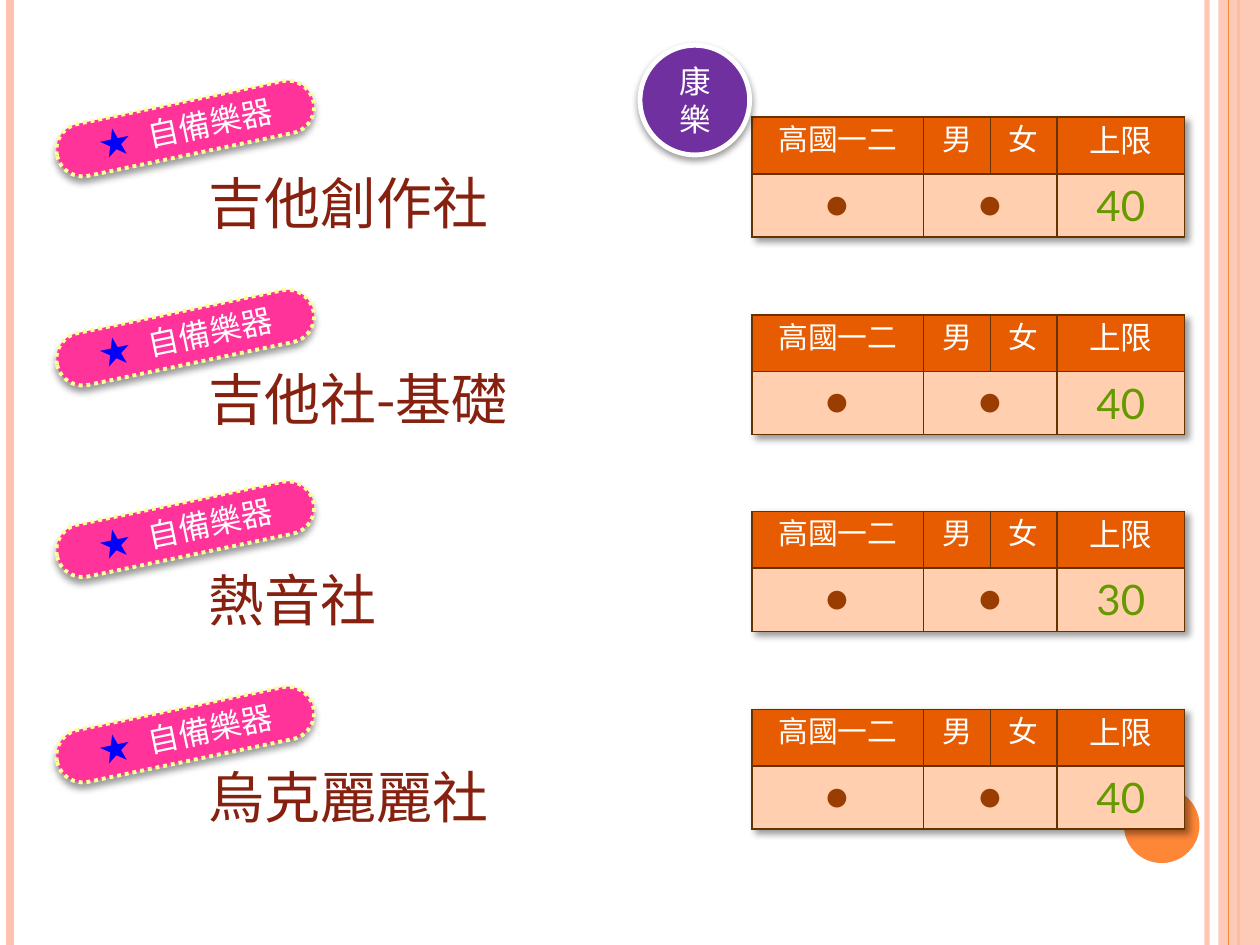
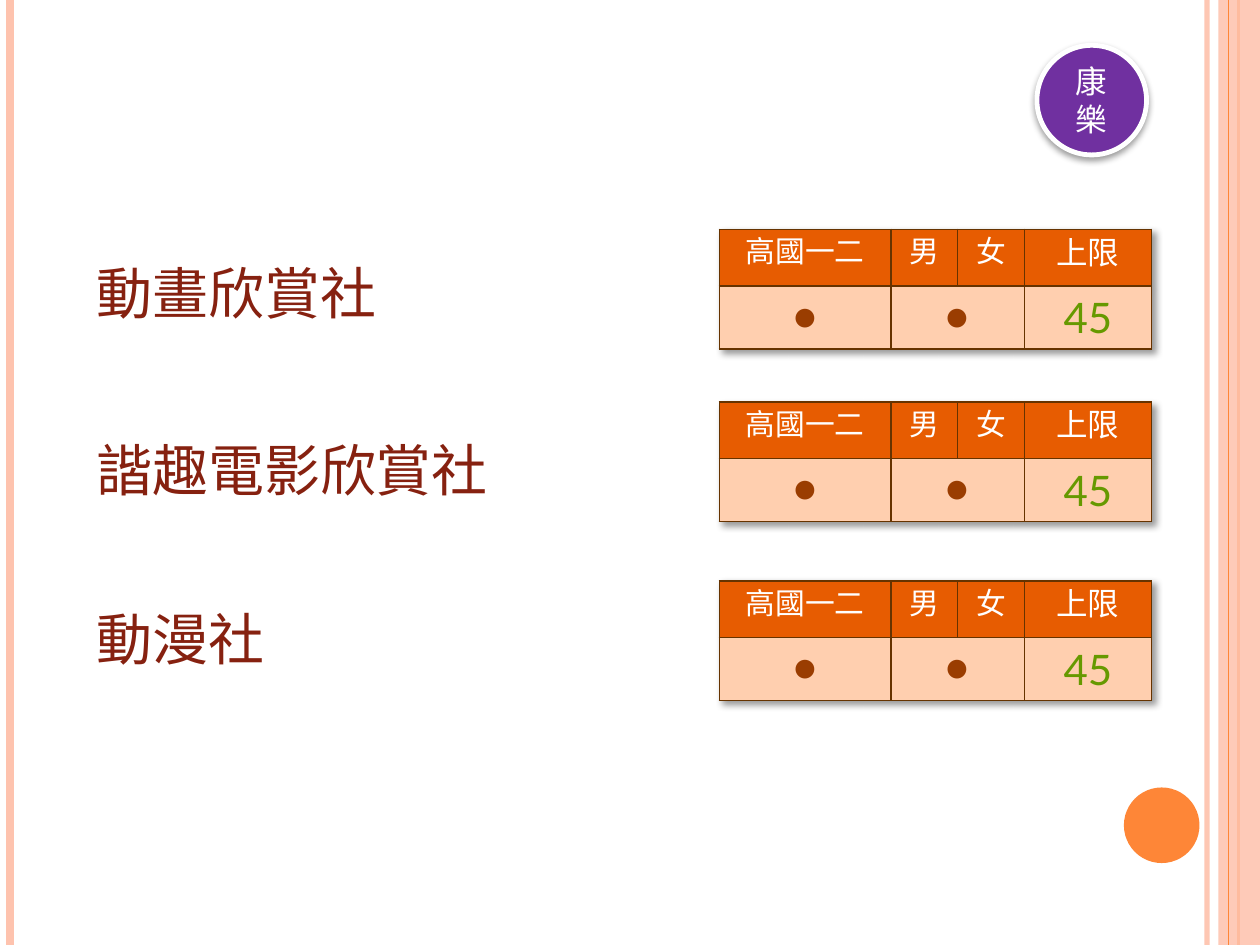
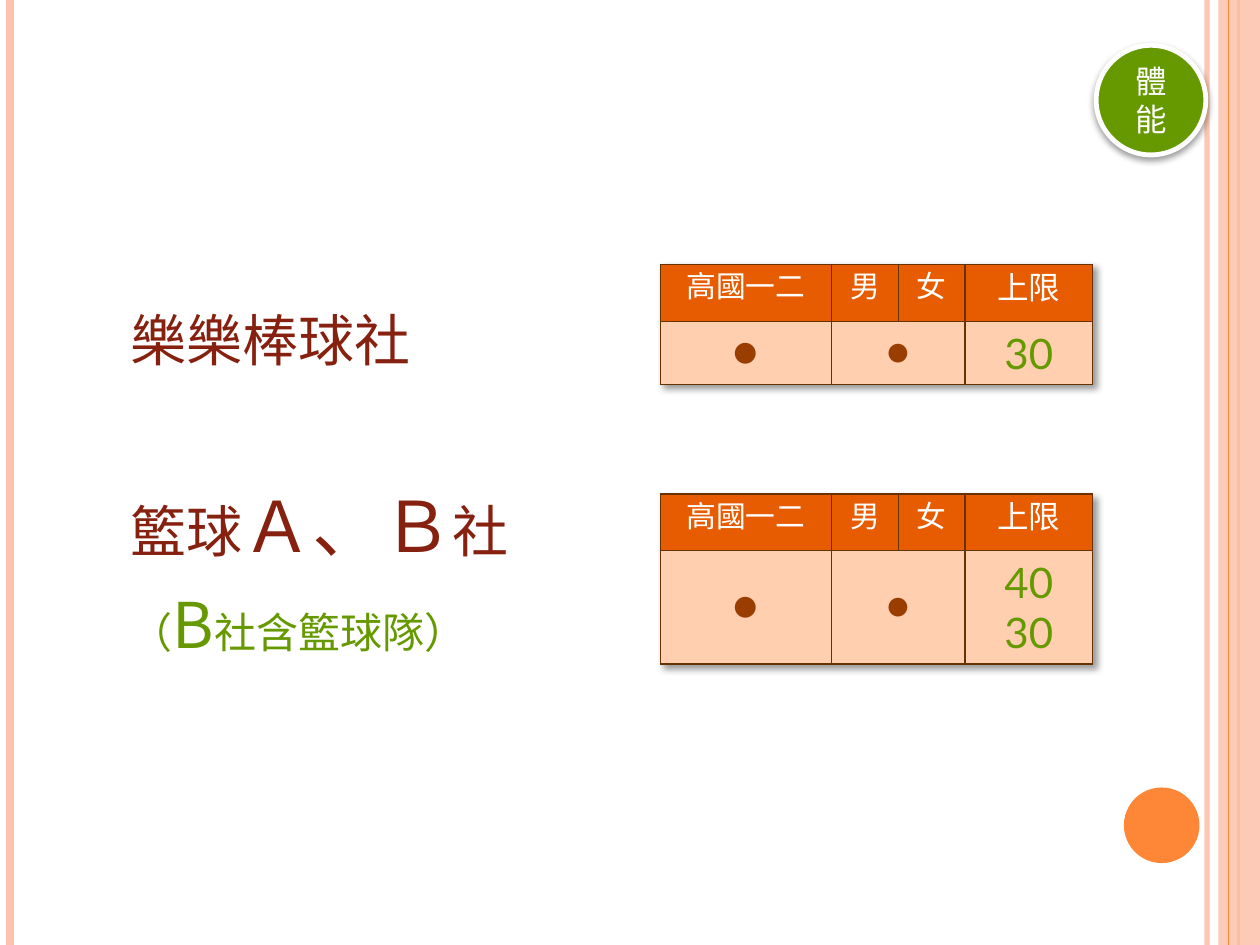
from dataclasses import dataclass

from lxml import etree
from pptx import Presentation
from pptx import util as u
from pptx.dml.color import RGBColor
from pptx.enum import dml, shapes, text
from pptx.oxml.ns import qn

PX = 9144
ALIGN = text.PP_ALIGN
ANCHOR = text.MSO_ANCHOR
KIND = shapes.MSO_SHAPE


@dataclass(frozen=True)
class Style:
    """Type settings of a whole paragraph."""
    size: int
    color: str
    face: str
    small_caps: bool = False


@dataclass(frozen=True)
class Theme:
    """Colours and type styles of the deck."""
    pale: str = "FEC3AE"
    accent: str = "FE8637"
    white: str = "FFFFFF"
    header: str = "E75C01"
    body: str = "FFCFAF"
    border: str = "663300"
    tag: str = "FF3399"
    tag_edge: str = "FFFF99"
    star: str = "0000FF"
    purple: str = "7030A0"
    green: str = "669900"
    title: Style = Style(40, "862110", "Noto Sans CJK SC", True)
    label: Style = Style(18, "FFFFFF", "TeX Gyre Adventor")
    head: Style = Style(17, "FFFFFF", "Arial")
    head_limit: Style = Style(18, "FFFFFF", "Arial")
    dot: Style = Style(18, "9A3D01", "TeX Gyre Adventor")
    big_dot: Style = Style(20, "9A3D01", "TeX Gyre Adventor")
    limit: Style = Style(24, "669900", "Lato")


T = Theme()


@dataclass(frozen=True)
class Span:
    """A piece of text that may differ from its paragraph."""
    text: str
    size: int | None = None
    color: str | None = None
    spacing: int | None = None


@dataclass(frozen=True)
class Box:
    """A rectangle in px."""
    x: int
    y: int
    w: int
    h: int

    def emu(self) -> tuple[int, ...]:
        """Return the rectangle in EMU."""
        return tuple(v * PX for v in (self.x, self.y, self.w, self.h))


@dataclass(frozen=True)
class Rule:
    """A vertical line over the full slide height."""
    x: int
    color: str
    width: float
    alpha: int = 100


@dataclass(frozen=True)
class Club:
    """One club: its name, places on the slide and member limits."""
    name: tuple[Span, ...]
    top: int
    table_top: int
    limits: tuple[str, ...]
    tag_top: int | None = None
    width: int = 817
    height: int = 125
    row_height: int = 50


@dataclass(frozen=True)
class Page:
    """One slide with its category badge and clubs."""
    badge: str
    badge_x: int
    badge_color: str
    title_x: int
    table_x: int
    clubs: tuple[Club, ...]
    first_dot: Style = T.dot


RULES_BACK = (Rule(958, T.pale, 3, 93), Rule(8, T.pale, 4.5), Rule(983, T.accent, 1.5))
RULE_FRONT = Rule(975, T.accent, 0.75)
HEADINGS = ("高國一二", "男", "女", "上限")
COLUMNS = (136, 53, 53, 101)
HEAD_HEIGHT = 45
TAG_SPANS = (Span("★ ", color=T.star, spacing=250), Span("自備樂器"))
TAG_ANGLE = 348.2

PAGES = (
    Page("康樂", 508, T.purple, 156, 597, (
        Club((Span("吉他創作社"),), 69, 93, ("40",), 81, 316),
        Club((Span("吉他社-基礎"),), 225, 250, ("40",), 247),
        Club((Span("熱音社"),), 384, 406, ("30",), 399),
        Club((Span("烏克麗麗社"),), 541, 563, ("40",), 562),
    )),
    Page("康樂", 823, T.purple, 67, 571, (
        Club((Span("動畫欣賞社"),), 141, 182, ("45",)),
        Club((Span("諧趣電影欣賞社"),), 281, 319, ("45",)),
        Club((Span("動漫社"),), 415, 461, ("45",)),
    )),
    Page("體能", 870, T.green, 94, 524, (
        Club((Span("樂樂棒球社"),), 178, 210, ("30",)),
        Club((Span("籃球", 40), Span("ａ、ｂ", 50), Span("社\n", 40),
              Span("（", 30, T.green), Span("b", 45, T.green), Span("社含籃球隊）", 30, T.green)),
             377, 392, ("40", "30"), width=883, height=155, row_height=90),
    ), T.big_dot),
)


def rgb(value: str) -> RGBColor:
    """Turn a hex string into a colour."""
    return RGBColor.from_string(value)


def set_alpha(parent, percent: int) -> None:
    """Make the first colour below an element see-through."""
    color = parent.find(".//" + qn("a:srgbClr"))
    etree.SubElement(color, qn("a:alpha"), val=str(percent * 1000))


def add_shadow(effects, dist: int, angle: int) -> None:
    """Put a soft black shadow into an effect list."""
    shadow = etree.SubElement(effects, qn("a:outerShdw"), blurRad=str(u.Pt(4)),
                              dist=str(u.Pt(dist)), dir=str(angle * 60000), rotWithShape="0")
    etree.SubElement(shadow, qn("a:srgbClr"), val="000000")
    set_alpha(shadow, 40)


def write(p, style: Style, spans: tuple[Span, ...], align=ALIGN.CENTER) -> None:
    """Fill a paragraph with spans in one style."""
    p.alignment = align
    p.font.size = u.Pt(style.size)
    p.font.color.rgb = rgb(style.color)
    p.font.name = style.face
    props = p._p.get_or_add_pPr().get_or_add_defRPr()
    props.find(qn("a:latin")).addnext(etree.Element(qn("a:ea"), typeface=style.face))
    if style.small_caps:
        props.set("cap", "small")
    for span in spans:
        r = p.add_run()
        r.text = span.text.rstrip("\n")
        if span.size:
            r.font.size = u.Pt(span.size)
        if span.color:
            r.font.color.rgb = rgb(span.color)
        if span.spacing:
            r._r.get_or_add_rPr().set("spc", str(span.spacing))
        if span.text.endswith("\n"):
            p.add_line_break()


def add_shape(parent, kind, box: Box, fill: str):
    """Add a flat shape without a line."""
    sp = parent.shapes.add_shape(kind, *box.emu())
    sp.shadow.inherit = False
    sp.fill.solid()
    sp.fill.fore_color.rgb = rgb(fill)
    sp.line.fill.background()
    return sp


def add_raised(parent, kind, box: Box, fill: str, edge: str, width: float, dist: int):
    """Add an outlined shape with a shadow below it."""
    sp = add_shape(parent, kind, box, fill)
    sp.line.color.rgb = rgb(edge)
    sp.line.width = u.Pt(width)
    add_shadow(sp._element.spPr.find(qn("a:effectLst")), dist, 90)
    return sp


def add_rule(s, rule: Rule) -> None:
    """Draw a vertical line."""
    line = s.shapes.add_connector(shapes.MSO_CONNECTOR.STRAIGHT,
                                  rule.x * PX, 0, rule.x * PX, 750 * PX)
    line.line.color.rgb = rgb(rule.color)
    line.line.width = u.Pt(rule.width)
    props = line._element.spPr
    if rule.alpha < 100:
        set_alpha(props, rule.alpha)
    etree.SubElement(props, qn("a:effectLst"))


def add_frame(s) -> None:
    """Draw the side bands and the corner disc."""
    for rule in RULES_BACK:
        add_rule(s, rule)
    band = add_shape(s, KIND.RECTANGLE, Box(967, 0, 33, 750), T.pale)
    set_alpha(band._element.spPr, 87)
    add_rule(s, RULE_FRONT)
    add_shape(s, KIND.OVAL, Box(892, 625, 60, 60), T.accent)


def add_title(s, x: int, club: Club) -> None:
    """Write a club name."""
    tf = s.shapes.add_textbox(*Box(x, club.top, club.width, club.height).emu()).text_frame
    tf.word_wrap = True
    tf.vertical_anchor = ANCHOR.BOTTOM
    write(tf.paragraphs[0], T.title, club.name, ALIGN.LEFT)


def add_tag(s, top: int) -> None:
    """Draw the tilted pill that asks for own instruments."""
    group = s.shapes.add_group_shape()
    pill = add_raised(group, KIND.ROUNDED_RECTANGLE, Box(43, top, 208, 42),
                      T.tag, T.tag_edge, 2.25, 3)
    pill.adjustments[0] = 0.5
    pill.line.dash_style = dml.MSO_LINE.ROUND_DOT
    label = group.shapes.add_textbox(*Box(68, top, 159, 40).emu())
    label.text_frame.word_wrap = False
    write(label.text_frame.paragraphs[0], T.label, TAG_SPANS)
    pill.rotation = label.rotation = TAG_ANGLE


def set_cell(cell, style: Style, lines: tuple[str, ...], fill: str, anchor) -> None:
    """Fill one table cell and draw its borders."""
    props = cell._tc.get_or_add_tcPr()
    for side in ("lnL", "lnR", "lnT", "lnB"):
        ln = etree.SubElement(props, qn(f"a:{side}"), w=str(u.Pt(1)))
        solid = etree.SubElement(ln, qn("a:solidFill"))
        etree.SubElement(solid, qn("a:srgbClr"), val=T.border)
    cell.fill.solid()
    cell.fill.fore_color.rgb = rgb(fill)
    cell.vertical_anchor = anchor
    tf = cell.text_frame
    for i, line in enumerate(lines):
        p = tf.add_paragraph() if i else tf.paragraphs[0]
        write(p, style, (Span(line),))


def add_limits(s, x: int, club: Club, first_dot: Style) -> None:
    """Draw the table of who may join a club."""
    heights = (HEAD_HEIGHT, club.row_height)
    box = Box(x, club.table_top, sum(COLUMNS), sum(heights))
    table = s.shapes.add_table(2, len(COLUMNS), *box.emu()).table
    table.first_row = table.horz_banding = False
    effects = etree.Element(qn("a:effectLst"))
    table._tbl.tblPr.insert(0, effects)
    add_shadow(effects, 3, 45)
    for column, width in zip(table.columns, COLUMNS):
        column.width = width * PX
    for row, height in zip(table.rows, heights):
        row.height = height * PX
    table.cell(1, 1).merge(table.cell(1, 2))
    entries = ((first_dot, ("●",)), (T.dot, ("●",)), (T.dot, ()), (T.limit, club.limits))
    for i, (heading, (style, lines)) in enumerate(zip(HEADINGS, entries)):
        head = T.head_limit if heading == HEADINGS[-1] else T.head
        set_cell(table.cell(0, i), head, (heading,), T.header, ANCHOR.TOP)
        set_cell(table.cell(1, i), style, lines, T.body, ANCHOR.MIDDLE)


def add_badge(s, page: Page) -> None:
    """Draw the round category badge."""
    sp = add_raised(s, KIND.OVAL, Box(page.badge_x, 36, 87, 87),
                    page.badge_color, T.white, 2.75, 2)
    tf = sp.text_frame
    tf.word_wrap = True
    tf.vertical_anchor = ANCHOR.MIDDLE
    write(tf.paragraphs[0], T.label, (Span(page.badge),))


def main() -> None:
    """Build and save the deck."""
    prs = Presentation()
    prs.slide_width, prs.slide_height = 1000 * PX, 750 * PX
    for page in PAGES:
        s = prs.slides.add_slide(prs.slide_layouts[6])
        add_frame(s)
        for club in page.clubs:
            add_title(s, page.title_x, club)
            add_limits(s, page.table_x, club, page.first_dot)
            if club.tag_top is not None:
                add_tag(s, club.tag_top)
        add_badge(s, page)
    prs.save("out.pptx")


if __name__ == "__main__":
    main()
